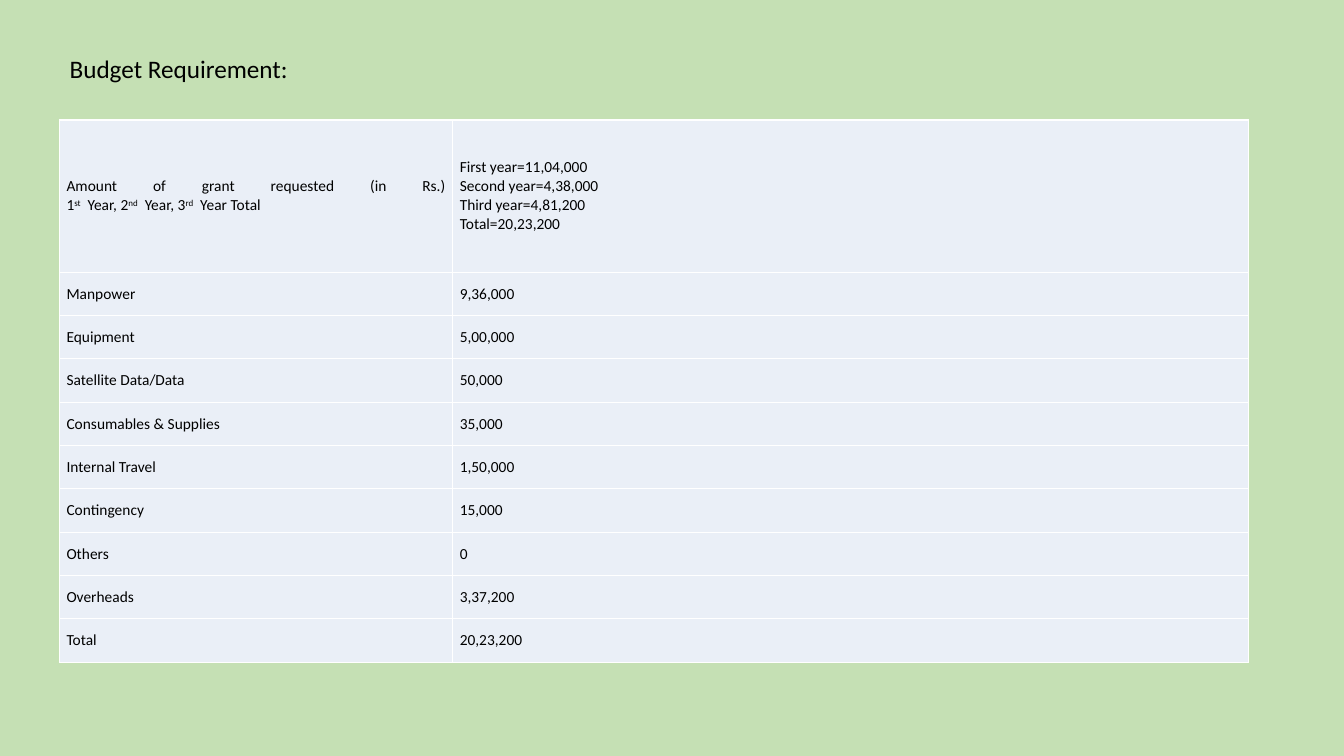
from dataclasses import dataclass

from lxml.etree import SubElement
from pptx import Presentation
from pptx.dml.color import RGBColor
from pptx.enum.text import MSO_ANCHOR as Anchor, MSO_AUTO_SIZE as AutoSize, PP_ALIGN as Align
from pptx.oxml.ns import qn
from pptx.util import Inches, Pt


@dataclass(frozen=True)
class Theme:
    font: str = "Calibri"
    background: RGBColor = RGBColor(0xC5, 0xE0, 0xB4)
    cell: RGBColor = RGBColor(0xEA, 0xEF, 0xF7)
    text: RGBColor = RGBColor(0, 0, 0)
    border: str = "FFFFFF"
    border_width: int = Pt(1)
    title_size: int = Pt(18)
    table_size: int = Pt(11)
    line_spacing: int = Pt(13.5)


THEME = Theme()
LEFT = 0.59
COLUMN_WIDTHS = (3.9, 7.89)
HEADER_HEIGHT, ITEM_HEIGHT = 1.51, 0.43

GRANT_LABEL = ("1", "st", "  Year, 2", "nd", "  Year, 3", "rd", "  Year Total")
YEARLY_GRANTS = (
    "First year=11,04,000",
    "Second year=4,38,000",
    "Third year=4,81,200",
    "Total=20,23,200",
)
BUDGET_ITEMS = (
    ("Manpower", "9,36,000"),
    ("Equipment", "5,00,000"),
    ("Satellite Data/Data", "50,000"),
    ("Consumables & Supplies", "35,000"),
    ("Internal Travel", "1,50,000"),
    ("Contingency", "15,000"),
    ("Others", "0"),
    ("Overheads", "3,37,200"),
    ("Total", "20,23,200"),
)


def apply(target, formats):
    for name, value in formats.items():
        setattr(target, name, value)


def add_span(para, text, size, superscript=False):
    span = para.add_run()
    span.text = text
    apply(span.font, {"name": THEME.font, "size": size, "bold": False})
    span.font.color.rgb = THEME.text
    if superscript:
        span._r.get_or_add_rPr().set("baseline", "30000")


def add_title(page, text):
    title = page.shapes.title
    apply(title, {"left": Inches(LEFT), "top": Inches(0.48),
                  "width": Inches(12.2), "height": Inches(0.71)})
    apply(title.text_frame, {"word_wrap": True, "auto_size": AutoSize.NONE,
                             "vertical_anchor": Anchor.TOP})
    para = title.text_frame.paragraphs[0]
    para.alignment = Align.LEFT
    add_span(para, text, THEME.title_size)


def add_borders(cell):
    properties = cell._tc.get_or_add_tcPr()
    for side in ("a:lnL", "a:lnR", "a:lnT", "a:lnB"):
        line = SubElement(properties, qn(side), w=str(THEME.border_width))
        fill = SubElement(line, qn("a:solidFill"))
        SubElement(fill, qn("a:srgbClr"), val=THEME.border)


def format_cell(cell):
    apply(cell, {"margin_left": Inches(0.07), "margin_right": Inches(0.07),
                 "margin_top": 0, "margin_bottom": 0,
                 "vertical_anchor": Anchor.MIDDLE})
    add_borders(cell)
    cell.fill.solid()
    cell.fill.fore_color.rgb = THEME.cell


def write_lines(cell, lines):
    frame = cell.text_frame
    for index, line in enumerate(lines):
        para = frame.add_paragraph() if index else frame.paragraphs[0]
        para.line_spacing = THEME.line_spacing
        add_span(para, line, THEME.table_size)


def write_grant_label(cell):
    """Write the justified label, whose ordinal endings are raised."""
    write_lines(cell, ["Amount of grant requested (in Rs.)"])
    para = cell.text_frame.paragraphs[0]
    para.alignment = Align.JUSTIFY
    para.add_line_break()
    for index, text in enumerate(GRANT_LABEL):
        add_span(para, text, THEME.table_size, superscript=index % 2 == 1)


def add_budget_table(page):
    heights = [HEADER_HEIGHT] + [ITEM_HEIGHT] * len(BUDGET_ITEMS)
    table = page.shapes.add_table(
        len(heights), len(COLUMN_WIDTHS), Inches(LEFT), Inches(1.19),
        Inches(sum(COLUMN_WIDTHS)), Inches(sum(heights))).table
    apply(table, {"first_row": False, "horz_banding": False})
    for column, width in zip(table.columns, COLUMN_WIDTHS):
        column.width = Inches(width)
    for row, height in zip(table.rows, heights):
        row.height = Inches(height)
    for cell in table.iter_cells():
        format_cell(cell)

    write_grant_label(table.cell(0, 0))
    write_lines(table.cell(0, 1), YEARLY_GRANTS)
    for row, item in enumerate(BUDGET_ITEMS, start=1):
        for column, text in enumerate(item):
            write_lines(table.cell(row, column), [text])


def main():
    deck = Presentation()
    apply(deck, {"slide_width": Inches(13.33), "slide_height": Inches(7.5)})
    page = deck.slides.add_slide(deck.slide_layouts.get_by_name("Title Only"))
    page.background.fill.solid()
    page.background.fill.fore_color.rgb = THEME.background
    add_title(page, "Budget Requirement:")
    add_budget_table(page)
    deck.save("out.pptx")


if __name__ == "__main__":
    main()
